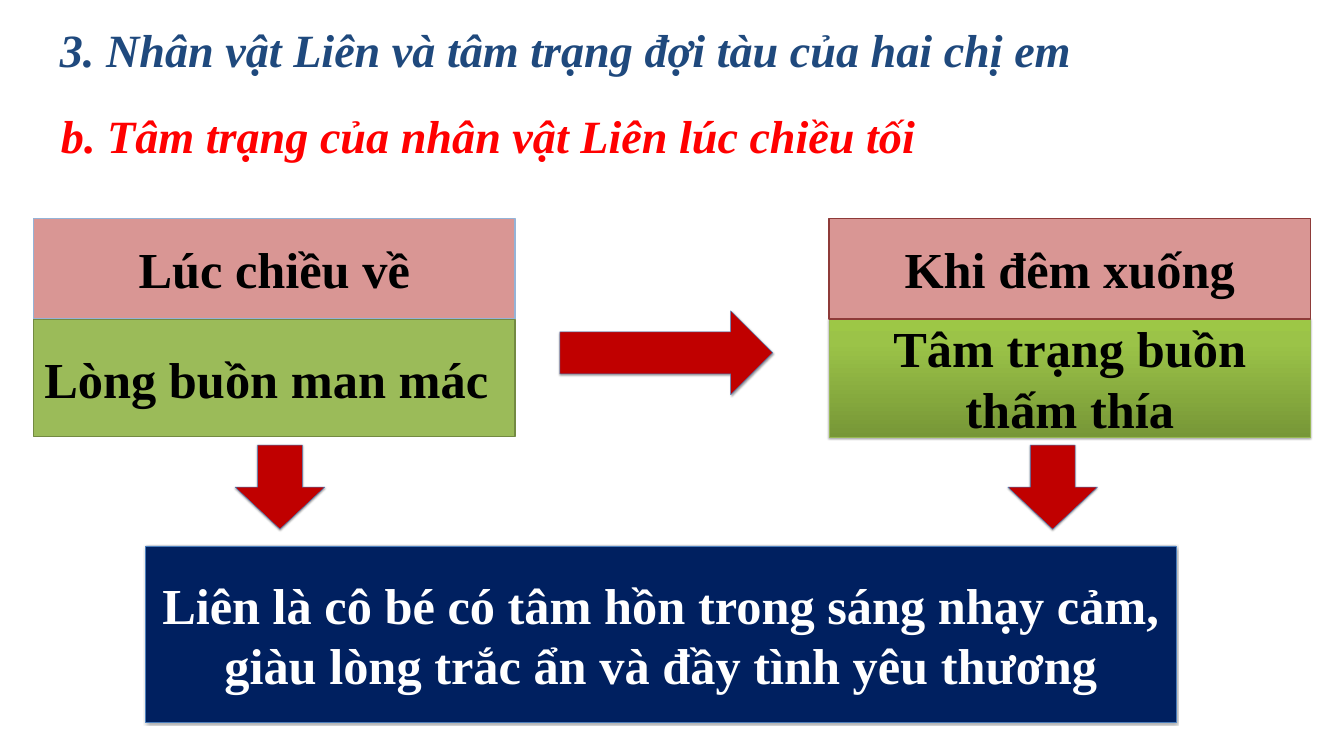
"""Build the slide on the character Liên and her mood at dusk."""
from lxml import etree
from pptx import Presentation
from pptx import util as u
from pptx.dml.color import RGBColor
from pptx.enum import shapes, text
from pptx.oxml import ns

FONT = "Times New Roman"
HUES = {
    "pink": "D99694", "green": "9BBB59", "navy": "002060", "red": "C00000",
    "sky": "95B3D7", "moss": "738A42", "blue": "4B7EBC", "lime": "98B955",
    "wine": "8E3B39", "black": "000000", "white": "FFFFFF",
    "title": "1F497D", "alert": "FF0000",
}
FADE = [(0, "779737"), (80, "9BC348"), (100, "9DC746")]
LEFT, RIGHT, WIDE = 48, 1184.4, 688
TOP, HEAD, BODY = 312, 144, 168
MID = TOP + HEAD

BOXES = [
    ("Lúc chiều về", (LEFT, TOP, WIDE, HEAD), "pink", "sky", 2, "black", (17, 17), 0),
    ("Lòng buồn man mác", (LEFT, MID, WIDE, BODY), "green", "moss", 2, "black", (0, 23), 0),
    ("Liên là cô bé có tâm hồn trong sáng nhạy cảm, giàu lòng trắc ẩn và đầy tình yêu thương",
     (208, 780, 1472.4, 252), "navy", "blue", 0.75, "white", (17, 17), 35),
    ("Tâm trạng buồn thấm thía", (RIGHT, MID, WIDE, BODY), FADE, "lime", 0.75, "black", (17, 17), 35),
    ("Khi đêm xuống", (RIGHT, TOP, WIDE, HEAD), "pink", "wine", 2, "black", (17, 17), 0),
]
ARROWS = [
    ("RIGHT_ARROW", (800, 444, 304, 120)),
    ("DOWN_ARROW", (1440, 636, 128, 120)),
    ("DOWN_ARROW", (336, 636, 128, 120)),
]
TITLES = [
    ("b. Tâm trạng của nhân vật Liên lúc chiều tối", (80, 150, 1248, 87), "alert", False),
    ("3. Nhân vật Liên và tâm trạng đợi tàu của hai chị em", (78.5, 26.6, 1770, 87), "title", True),
]


def rgb(name):
    return RGBColor.from_string(HUES[name])


def place(spot):
    return [u.Pt(n) for n in spot]


def node(base, tag, **attrs):
    return etree.SubElement(base, ns.qn(tag), {k: str(v) for k, v in attrs.items()})


def tint(base, hue):
    return node(base, "a:srgbClr", val=hue)


def shade(shape, alpha):
    shape.shadow.inherit = False
    if alpha:
        list_ = shape.element.spPr.find(ns.qn("a:effectLst"))
        drop = node(list_, "a:outerShdw", blurRad=u.Pt(3.1), dist=u.Pt(1.7),
                    dir=5400000, rotWithShape=0)
        node(tint(drop, HUES["black"]), "a:alpha", val=alpha * 1000)


def blend(shape, stops):
    shape.fill.gradient()
    shape.fill.gradient_angle = 90
    grad = shape.element.spPr.find(ns.qn("a:gradFill"))
    group = grad.find(ns.qn("a:gsLst"))
    for old in list(group):
        group.remove(old)
    for pos, hue in stops:
        tint(node(group, "a:gs", pos=pos * 1000), hue)


def draw(slide, kind, spot, fill, line, width, alpha):
    shape = slide.shapes.add_shape(getattr(shapes.MSO_SHAPE, kind), *place(spot))
    if isinstance(fill, list):
        blend(shape, fill)
    else:
        shape.fill.solid()
        shape.fill.fore_color.rgb = rgb(fill)
    shape.line.color.rgb = rgb(line)
    shape.line.width = u.Pt(width)
    shade(shape, alpha)
    return shape


def write(frame, words, size, hue, slant=False):
    para = frame.paragraphs[0]
    para.text = words
    font = para.font
    font.name, font.size, font.bold, font.italic = FONT, u.Pt(size), True, slant
    font.color.rgb = rgb(hue)
    return para


def main():
    deck = Presentation()
    deck.slide_width, deck.slide_height = u.Pt(1920.24), u.Pt(1080)
    slide = deck.slides.add_slide(deck.slide_layouts[6])
    for words, spot, fill, line, width, hue, sides, alpha in BOXES:
        frame = draw(slide, "RECTANGLE", spot, fill, line, width, alpha).text_frame
        frame.word_wrap = True
        frame.vertical_anchor = text.MSO_ANCHOR.MIDDLE
        frame.margin_left, frame.margin_right = place(sides)
        frame.margin_top = frame.margin_bottom = u.Pt(8.5)
        write(frame, words, 72, hue).alignment = text.PP_ALIGN.CENTER
    for kind, spot in ARROWS:
        draw(slide, kind, spot, "red", "blue", 0.75, 38)
    for words, spot, hue, wrap in TITLES:
        frame = slide.shapes.add_textbox(*place(spot)).text_frame
        frame.word_wrap = wrap
        frame.auto_size = text.MSO_AUTO_SIZE.SHAPE_TO_FIT_TEXT
        write(frame, words, 66, hue, True)
    deck.save("out.pptx")


if __name__ == "__main__":
    main()
